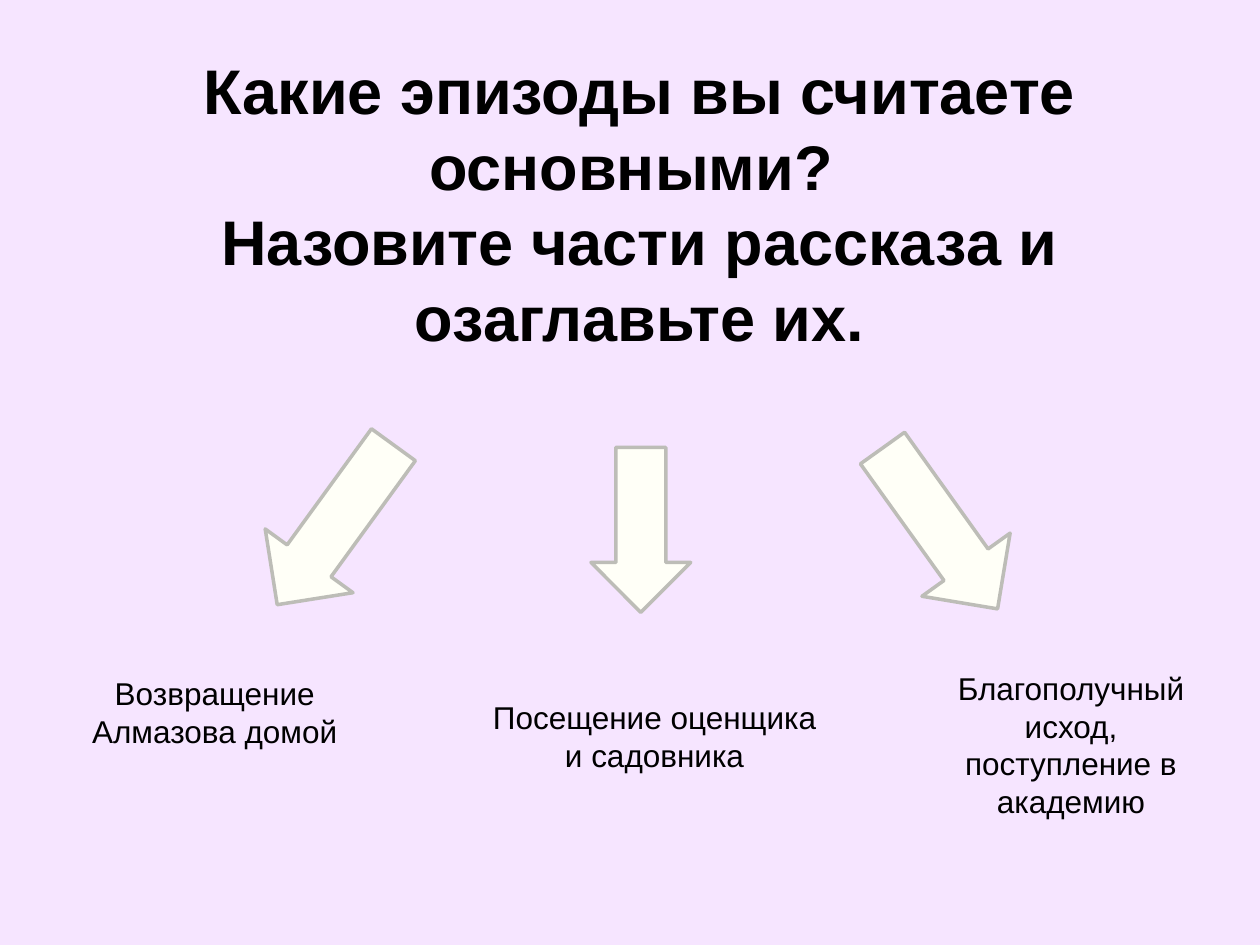
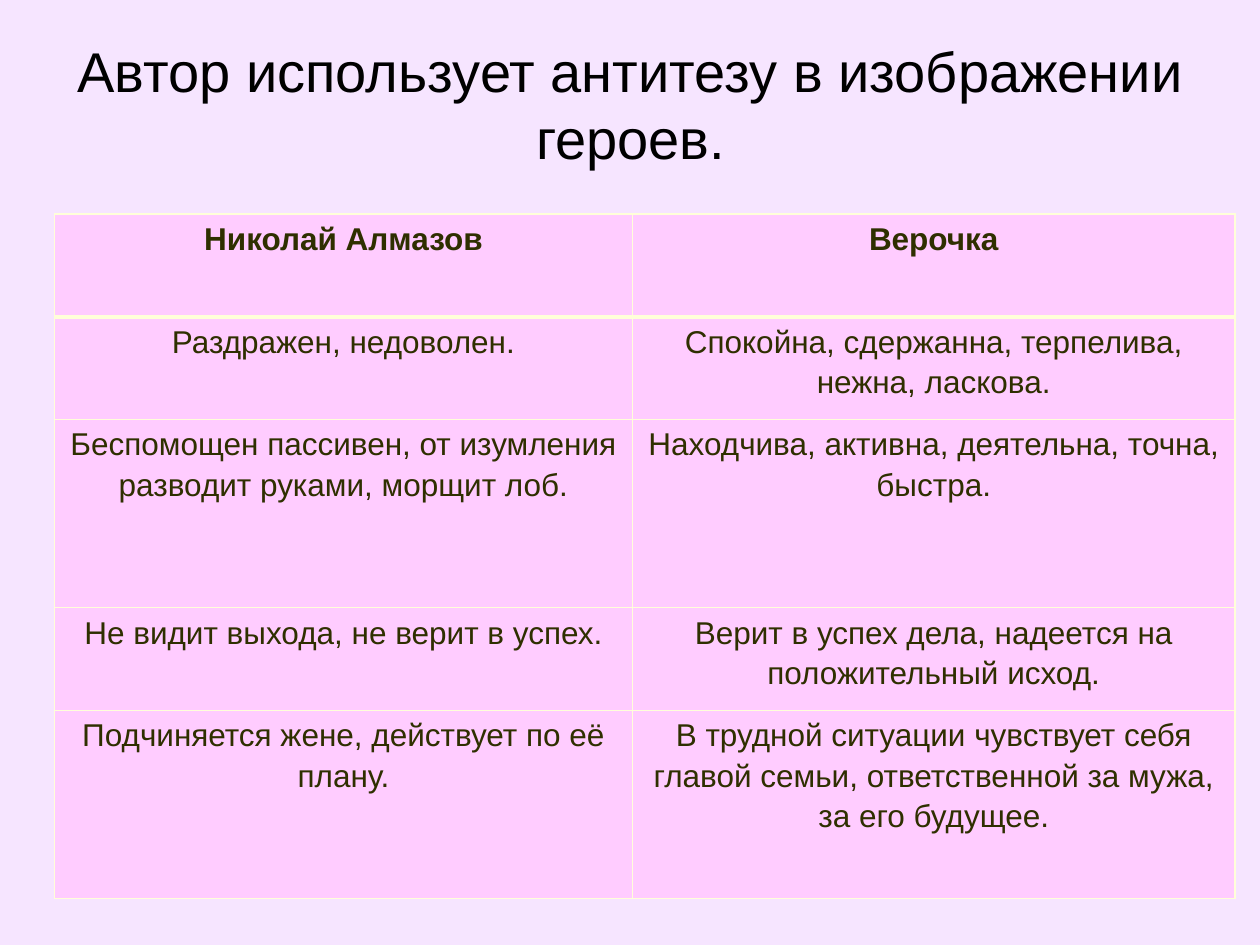
from lxml.etree import SubElement
from pptx import Presentation
from pptx.dml.color import RGBColor
from pptx.enum.shapes import MSO_SHAPE as Shape
from pptx.enum.text import MSO_ANCHOR as Anchor, MSO_AUTO_SIZE as AutoSize, PP_ALIGN as Align
from pptx.oxml.ns import qn
from pptx.util import Pt

COLORS = {
    "background": "F6E5FF", "title": "000000",
    "arrow": "FFFFF7", "arrow_line": "BDBDB7",
    "cell": "FFCCFF", "cell_text": "2F2F00", "border": "FFFFD9",
}
FONT = "Arial"
TITLE_ONLY = 5

# Boxes are left, top, width, height in points
QUESTION_BOX = (31, 26, 669, 190)
EPISODES_BOX = (31, 243, 669, 230)
ANTITHESIS_TITLE_BOX = (14.4, 17.3, 692, 85)
TABLE_BOX = (31, 122.4, 674.6, 391)

QUESTIONS = ["Какие эпизоды вы считаете основными? ",
             "Назовите части рассказа и озаглавьте их."]

# Text, text box, arrow box and arrow rotation, relative to the episodes box
EPISODES = [
    ("Возвращение Алмазова домой", (7.2, 138.6, 169, 73), (129.6, 0.4, 62, 113), 36),
    ("Посещение оценщика и садовника", (238.3, 152.3, 209.5, 51), (306.7, 12.6, 57, 94.3), 0),
    ("Благополучный исход, поступление в академию", (493.2, 135.7, 175.7, 94),
     (475.2, 2.5, 62, 113), 324.4),
]

CONTRASTS = [
    ("Николай Алмазов", "Верочка"),
    ("Раздражен, недоволен.", "Спокойна, сдержанна, терпелива, нежна, ласкова."),
    ("Беспомощен пассивен, от изумления разводит руками, морщит лоб.",
     "Находчива, активна, деятельна, точна, быстра."),
    ("Не видит выхода, не верит в успех.",
     "Верит в успех дела, надеется на положительный исход."),
    ("Подчиняется жене, действует по её плану.",
     "В трудной ситуации чувствует себя главой семьи, ответственной за мужа, за его будущее."),
]
COLUMN_SHARES = (0.49, 0.51)
ROW_SHARES = (0.15, 0.15, 0.275, 0.15, 0.275)


def color(name):
    return RGBColor.from_string(COLORS[name])


def apply(target, values):
    for name, value in values.items():
        setattr(target, name, value)


def place(box, offset=(0, 0)):
    left, top, width, height = box
    return [Pt(value) for value in (left + offset[0], top + offset[1], width, height)]


def write(text_frame, paragraphs, size, color_name="title", bold=False, spacing=None):
    text_frame.text = "\n".join(paragraphs)
    for paragraph in text_frame.paragraphs:
        apply(paragraph, {"alignment": Align.CENTER, "line_spacing": spacing})
        for run in paragraph.runs:
            apply(run.font, {"name": FONT, "size": Pt(size), "bold": bold})
            run.font.color.rgb = color(color_name)


def add_titled_slide(presentation, box, paragraphs, size, bold=False):
    slide = presentation.slides.add_slide(presentation.slide_layouts[TITLE_ONLY])
    slide.background.fill.solid()
    slide.background.fill.fore_color.rgb = color("background")
    title = slide.shapes.title
    apply(title, dict(zip(("left", "top", "width", "height"), place(box))))
    apply(title.text_frame, {"word_wrap": True, "auto_size": AutoSize.NONE,
                             "vertical_anchor": Anchor.TOP})
    write(title.text_frame, paragraphs, size, bold=bold)
    return slide


def add_episodes(slide, box):
    """Arrows that fan out to the captions below them."""
    for text, text_box, arrow_box, rotation in EPISODES:
        arrow = slide.shapes.add_shape(Shape.DOWN_ARROW, *place(arrow_box, box))
        arrow.rotation = rotation
        arrow.shadow.inherit = False
        arrow.fill.solid()
        arrow.fill.fore_color.rgb = color("arrow")
        arrow.line.color.rgb = color("arrow_line")
        arrow.line.width = Pt(2)

        caption = slide.shapes.add_textbox(*place(text_box, box))
        caption.text_frame.word_wrap = True
        write(caption.text_frame, [text], 18)


def set_borders(cell, bottom_width):
    properties = cell._tc.get_or_add_tcPr()
    widths = {"a:lnL": 1, "a:lnR": 1, "a:lnT": 1, "a:lnB": bottom_width}
    for index, (tag, width) in enumerate(widths.items()):
        line = properties.makeelement(qn(tag), {"w": str(Pt(width))})
        fill = SubElement(line, qn("a:solidFill"))
        SubElement(fill, qn("a:srgbClr"), val=COLORS["border"])
        properties.insert(index, line)


def add_contrast_table(slide, box):
    frame = slide.shapes.add_table(len(CONTRASTS), len(COLUMN_SHARES), *place(box))
    table = frame.table
    apply(table, {"first_row": False, "horz_banding": False})
    for column, share in zip(table.columns, COLUMN_SHARES):
        column.width = Pt(round(box[2] * share, 2))
    for row, share in zip(table.rows, ROW_SHARES):
        row.height = Pt(round(box[3] * share, 2))

    for row_index, texts in enumerate(CONTRASTS):
        heading = row_index == 0
        for column_index, text in enumerate(texts):
            cell = table.cell(row_index, column_index)
            apply(cell, {"margin_left": Pt(2), "margin_right": Pt(2),
                         "margin_top": Pt(1.5), "margin_bottom": Pt(1.5)})
            cell.fill.solid()
            cell.fill.fore_color.rgb = color("cell")
            write(cell.text_frame, [text], 18, "cell_text", heading, 1.15)
            # The heading row has a heavier rule, shared with the row below
            set_borders(cell, 3 if heading else 1)
            if row_index == 1:
                cell._tc.tcPr.find(qn("a:lnT")).set("w", str(Pt(3)))


def main():
    presentation = Presentation()
    apply(presentation, {"slide_width": Pt(720), "slide_height": Pt(540)})

    # Episodes of the story
    slide = add_titled_slide(presentation, QUESTION_BOX, QUESTIONS, 36, bold=True)
    add_episodes(slide, EPISODES_BOX)

    # Contrast of the characters
    slide = add_titled_slide(presentation, ANTITHESIS_TITLE_BOX,
                             ["Автор использует антитезу в изображении героев."], 32)
    add_contrast_table(slide, TABLE_BOX)

    presentation.save("out.pptx")


if __name__ == "__main__":
    main()
